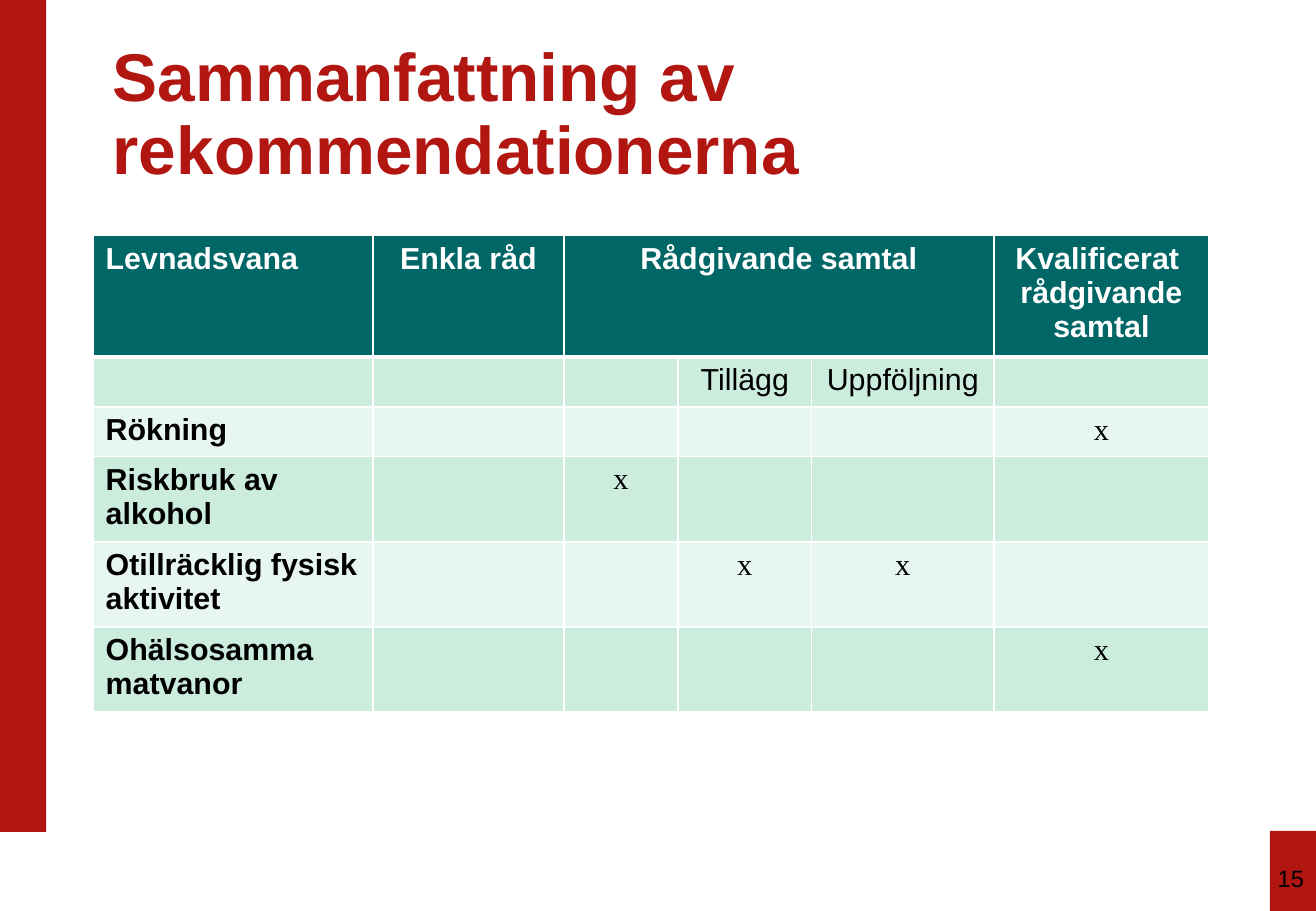
from pptx import Presentation
from pptx.util import Inches, Pt
from pptx.dml.color import RGBColor as RGB
from pptx.enum.shapes import MSO_SHAPE as Shape
from pptx.enum.text import PP_ALIGN as Align, MSO_ANCHOR as Anchor
from pptx.oxml import parse_xml
from pptx.oxml.ns import nsdecls

HUES = {"red": "B21611", "teal": "006666", "mint": "CCECDE",
        "pale": "E7F6EF", "white": "FFFFFF", "black": "000000"}
WIDE, HIGH = 10.83, 7.5
BAR = 0.38


def style(para, size, hue, bold=False, face="Arial"):
    for run in para.runs:
        font = run.font
        font.size, font.bold, font.name = Pt(size), bold, face
        font.color.rgb = RGB.from_string(HUES[hue])


def add_text(box, text):
    frame = slide.shapes.add_textbox(*map(Inches, box)).text_frame
    frame.word_wrap = True
    frame.text = text
    return frame


deck = Presentation()
deck.slide_width, deck.slide_height = Inches(WIDE), Inches(HIGH)
slide = deck.slides.add_slide(deck.slide_layouts[6])

# Red side bar and page number block
for box in [(0, 0, BAR, 6.85), (WIDE - BAR, 6.84, BAR, HIGH - 6.84)]:
    bar = slide.shapes.add_shape(Shape.RECTANGLE, *map(Inches, box))
    bar.shadow.inherit = False
    bar.fill.solid()
    bar.fill.fore_color.rgb = RGB.from_string(HUES["red"])
    bar.line.fill.background()

# Title
title = add_text((0.83, 0.33, 9.21, 1.25), "Sammanfattning av rekommendationerna")
title.vertical_anchor = Anchor.MIDDLE
title.paragraphs[0].line_spacing = 0.9
style(title.paragraphs[0], 40, "red", True)

# Table of recommendations
cols = [2.3, 1.57, 0.94, 1.1, 1.5, 1.77]
rows = [1, 0.41, 0.41, 0.7, 0.7, 0.7]
data = [
    ["Levnadsvana", "Enkla råd", "Rådgivande samtal", "", "",
     "Kvalificerat \nrådgivande samtal"],
    ["", "", "", "Tillägg", "Uppföljning", ""],
    ["Rökning", "", "", "", "", "x"],
    ["Riskbruk av\nalkohol", "", "x", "", "", ""],
    ["Otillräcklig fysisk aktivitet", "", "", "x", "x", ""],
    ["Ohälsosamma matvanor", "", "", "", "", "x"],
]
table = slide.shapes.add_table(
    len(rows), len(cols), Inches(0.77), Inches(1.94),
    Inches(sum(cols)), Inches(sum(rows))).table
for col, width in zip(table.columns, cols):
    col.width = Inches(width)
for row, height in zip(table.rows, rows):
    row.height = Inches(height)

for r, line in enumerate(data):
    head = r == 0
    back = "teal" if head else "mint" if r % 2 else "pale"
    for c, text in enumerate(line):
        cell = table.cell(r, c)
        # White borders, thicker below the header
        props = cell._tc.get_or_add_tcPr()
        for side in "LRTB":
            thick = (r, side) in [(0, "B"), (1, "T")]
            props.append(parse_xml(
                f'<a:ln{side} {nsdecls("a")} w="{Pt(3 if thick else 1)}">'
                f'<a:solidFill><a:srgbClr val="{HUES["white"]}"/></a:solidFill>'
                f'</a:ln{side}>'))
        cell.fill.solid()
        cell.fill.fore_color.rgb = RGB.from_string(HUES[back])
        cell.text_frame.text = text
        for para in cell.text_frame.paragraphs:
            para.alignment = Align.CENTER if c else Align.LEFT
            style(para, 18, "white" if head else "black", head or c == 0,
                  "Times New Roman" if text == "x" else "Arial")
table.cell(0, 2).merge(table.cell(0, 4))

# Page number
page = add_text((WIDE - 2.26, 7.06, 2.26, 0.44), "15").paragraphs[0]
page.alignment = Align.RIGHT
style(page, 14, "black")

deck.save("out.pptx")
